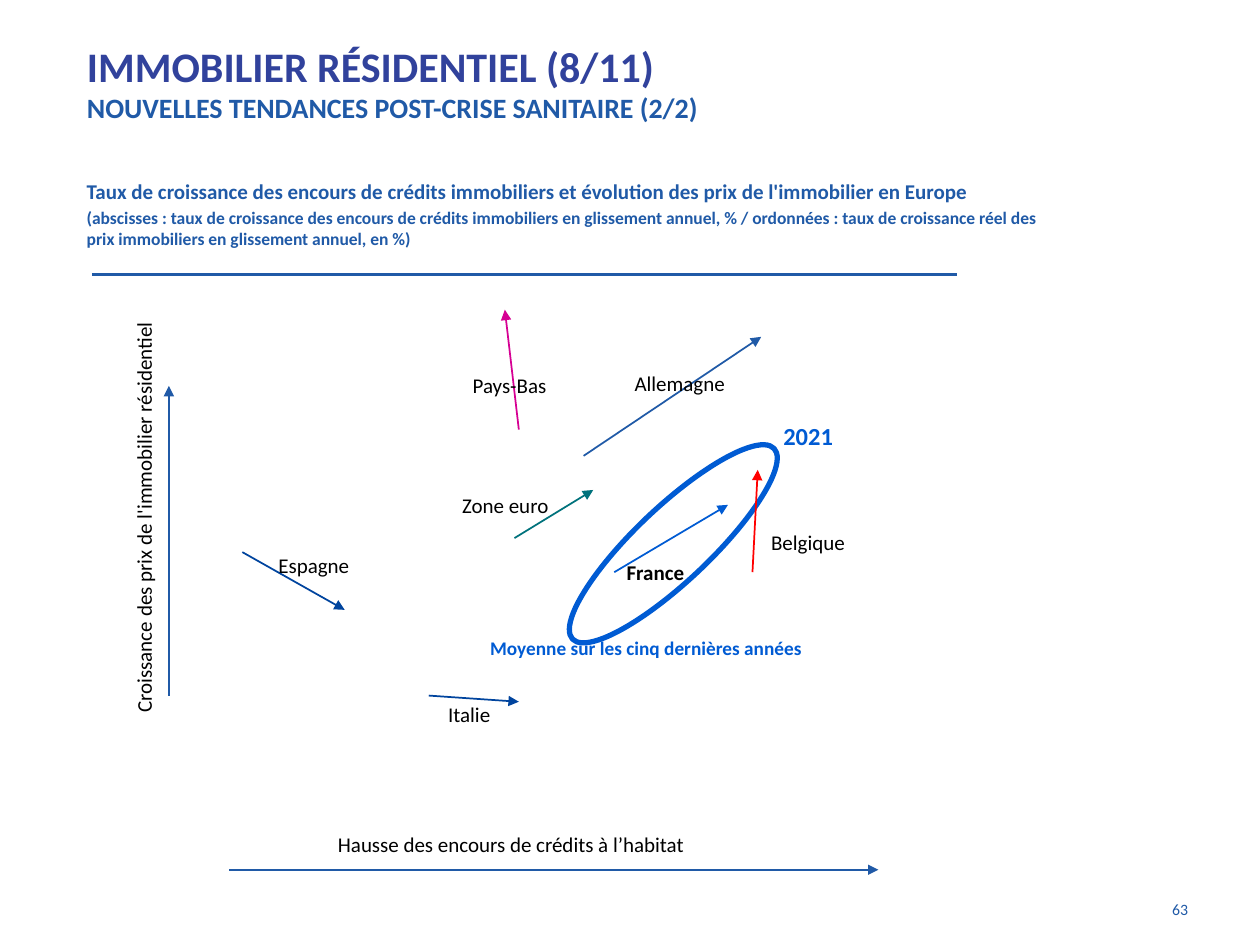
"""Build the slide on housing loan growth and house prices in Europe."""
import pptx
import pptx.dml.color
import pptx.enum.shapes
import pptx.enum.text
import pptx.oxml
import pptx.oxml.ns
import pptx.util
from pptx.util import Pt

THEME = {
    "font": "Calibri",
    "colors": {
        "title": "31429C", "main": "205AA7", "highlight": "005BD3", "navy": "00449E",
        "teal": "00727C", "magenta": "D60093", "red": "FF0000", "text": "000000",
    },
    "sizes": {
        "title": 24, "subtitle": 16, "year": 14, "label": 12,
        "average": 11, "note": 10, "page": 9,
    },
}


def format_paragraph(paragraph, size, color, bold=False):
    for run in paragraph.runs:
        run.font.name = THEME["font"]
        run.font.size = Pt(THEME["sizes"][size])
        run.font.bold = bold
        run.font.color.rgb = pptx.dml.color.RGBColor.from_string(THEME["colors"][color])


def add_line(slide, start, end, color, width=1, arrow=True):
    connector = slide.shapes.add_connector(
        pptx.enum.shapes.MSO_CONNECTOR.STRAIGHT, *map(Pt, start + end))
    connector.line.width = Pt(width)
    connector.line.color.rgb = pptx.dml.color.RGBColor.from_string(THEME["colors"][color])
    properties = connector._element.spPr
    if arrow:
        head = pptx.oxml.parse_xml(
            f'<a:tailEnd {pptx.oxml.ns.nsdecls("a")} type="triangle"/>')
        properties.find(pptx.oxml.ns.qn("a:ln")).append(head)
    properties.append(pptx.oxml.parse_xml(f'<a:effectLst {pptx.oxml.ns.nsdecls("a")}/>'))


presentation = pptx.Presentation()
presentation.slide_width, presentation.slide_height = Pt(720), Pt(540)
slide = presentation.slides.add_slide(presentation.slide_layouts[5])

title = slide.shapes.title
title.left, title.top, title.width, title.height = Pt(42.5), Pt(2), Pt(677.5), Pt(90)
title.text_frame.text = (
    "IMMOBILIER RÉSIDENTIEL (8/11)\nNOUVELLES TENDANCES POST-CRISE SANITAIRE (2/2)")
title.text_frame.auto_size = pptx.enum.text.MSO_AUTO_SIZE.NONE
title.text_frame.vertical_anchor = pptx.enum.text.MSO_ANCHOR.MIDDLE
heading, subheading = title.text_frame.paragraphs
format_paragraph(heading, "title", "title", True)
format_paragraph(subheading, "subtitle", "main", True)
for paragraph in (heading, subheading):
    paragraph.alignment = pptx.enum.text.PP_ALIGN.LEFT

caption = slide.shapes.add_textbox(Pt(42.5), Pt(98.5), Pt(559.5), Pt(56))
caption.text_frame.word_wrap = True
caption.text_frame.text = (
    "Taux de croissance des encours de crédits immobiliers et évolution des prix "
    "de l'immobilier en Europe\n"
    "(abscisses : taux de croissance des encours de crédits immobiliers en glissement "
    "annuel, % / ordonnées : taux de croissance réel des prix immobiliers en glissement "
    "annuel, en %)")
for paragraph, size in zip(caption.text_frame.paragraphs, ("label", "note")):
    paragraph.space_before = Pt(2)
    format_paragraph(paragraph, size, "main", True)
add_line(slide, (52.5, 157), (547, 157), "main", 1.5, arrow=False)

ellipse = slide.shapes.add_shape(
    pptx.enum.shapes.MSO_SHAPE.OVAL, Pt(305.5), Pt(289.5), Pt(158.5), Pt(42.5))
ellipse.rotation = 316.6
ellipse.shadow.inherit = False
ellipse.fill.background()
ellipse.line.width = Pt(3)
ellipse.line.color.rgb = pptx.dml.color.RGBColor.from_string(THEME["colors"]["highlight"])

axes = [
    ((131, 497), (502, 497), "main"),
    ((96.5, 397.5), (96.5, 220.5), "main"),
]
country_arrows = [
    ((351, 327), (416, 288.5), "highlight"),
    ((294, 307.5), (339, 280), "teal"),
    ((333.5, 260.5), (435, 192.5), "main"),
    ((296.5, 245.5), (288.5, 177), "magenta"),
    ((245, 397.5), (296.5, 401), "navy"),
    ((138.5, 315.5), (197, 348.5), "navy"),
    ((430, 327), (433, 268.5), "red"),
]
for start, end, color in axes + country_arrows:
    add_line(slide, start, end, color)

labels = [
    ("Allemagne", 355.5, 208, 74, "label", "text", False),
    ("France", 351, 316, 47.5, "label", "text", True),
    ("Pays-Bas", 263, 209.5, 57, "label", "text", False),
    ("Belgique", 433.5, 299, 57, "label", "text", False),
    ("Zone euro", 257, 278, 64, "label", "text", False),
    ("Espagne", 152, 312, 55.5, "label", "text", False),
    ("Italie", 249, 397.5, 39, "label", "text", False),
    ("Hausse des encours de crédits à l’habitat", 186, 471.5, 214.5, "label", "text", False),
    ("2021", 440.5, 237, 43, "year", "highlight", True),
    ("Moyenne sur les cinq dernières années", 273, 360, 193.5, "average", "highlight", True),
]
for text, left, top, width, size, color, bold in labels:
    label = slide.shapes.add_textbox(Pt(left), Pt(top), Pt(width), Pt(22))
    label.text_frame.word_wrap = False
    label.text_frame.text = text
    format_paragraph(label.text_frame.paragraphs[0], size, color, bold)

price_axis_label = slide.shapes.add_textbox(Pt(-40.5), Pt(260.5), Pt(265.5), Pt(42))
price_axis_label.rotation = 270
price_axis_label.text_frame.word_wrap = True
price_axis_label.text_frame.text = "Croissance des prix de l'immobilier résidentiel"
format_paragraph(price_axis_label.text_frame.paragraphs[0], "label", "text")

page_number = slide.shapes.add_textbox(Pt(643.5), Pt(510.5), Pt(42.5), Pt(28))
page_number.text_frame.word_wrap = True
page_number.text_frame.text = "63"
page_number.text_frame.paragraphs[0].alignment = pptx.enum.text.PP_ALIGN.RIGHT
format_paragraph(page_number.text_frame.paragraphs[0], "page", "main")

presentation.save("out.pptx")
